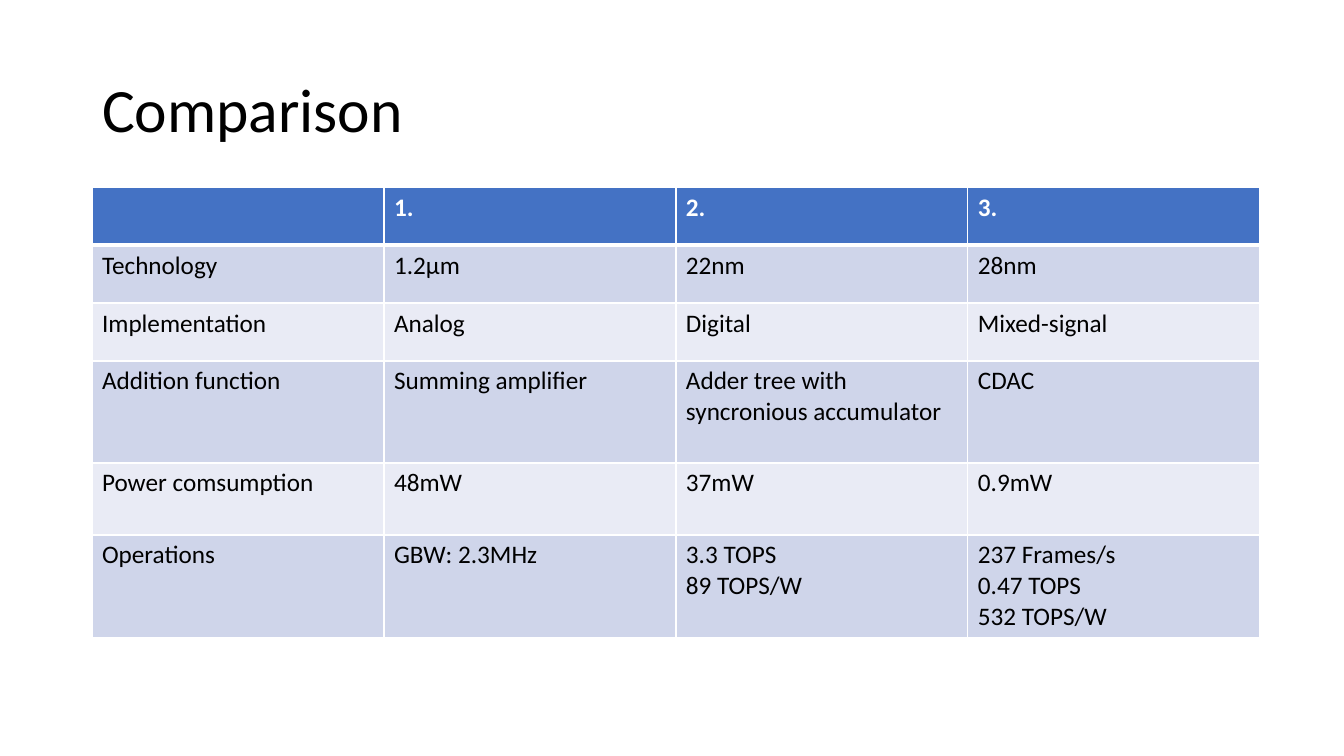
import pptx
import pptx.dml.color
import pptx.enum.text
import pptx.oxml
import pptx.oxml.ns
import pptx.util

RGB = pptx.dml.color.RGBColor
BLACK = RGB(0x00, 0x00, 0x00)
WHITE = RGB(0xFF, 0xFF, 0xFF)
BLUE = RGB(0x44, 0x72, 0xC4)
BANDS = [RGB(0xE9, 0xEB, 0xF5), RGB(0xCF, 0xD5, 0xEA)]
FONT = "Calibri"

TITLE = "Comparison"
ROWS = [
    ("", "1.", "2.", "3."),
    ("Technology", "1.2µm", "22nm", "28nm"),
    ("Implementation", "Analog", "Digital", "Mixed-signal"),
    ("Addition function", "Summing amplifier", "Adder tree with syncronious accumulator", "CDAC"),
    ("Power comsumption", "48mW", "37mW", "0.9mW"),
    ("Operations", "GBW: 2.3MHz", "3.3 TOPS\n89 TOPS/W", "237 Frames/s\n0.47 TOPS\n532 TOPS/W"),
]
SLIDE_SIZE = (1344, 756)
TITLE_BOX = (92, 40, 1159, 146)
TABLE_LEFT, TABLE_TOP = 92, 187
COLUMN_WIDTH = 292
ROW_HEIGHTS = [58, 58, 58, 102, 72, 102]


def px(n):
    return pptx.util.Emu(round(n * 914400 / 100.8))


def write(tf, text, size, color=BLACK, bold=False, spacing=None):
    tf.text = text
    for p in tf.paragraphs:
        p.alignment = pptx.enum.text.PP_ALIGN.LEFT
        p.line_spacing = spacing
        p.font.size = pptx.util.Pt(size)
        for r in p.runs:
            r.font.name = FONT
            r.font.size = pptx.util.Pt(size)
            r.font.bold = bold
            r.font.color.rgb = color


def set_borders(cell, top, bottom):
    tc_pr = cell._tc.get_or_add_tcPr()
    widths = {"lnL": 1, "lnR": 1, "lnT": top, "lnB": bottom}
    for i, (side, width) in enumerate(widths.items()):
        tc_pr.insert(i, pptx.oxml.parse_xml(
            f'<a:{side} {pptx.oxml.ns.nsdecls("a")} w="{pptx.util.Pt(width)}">'
            f'<a:solidFill><a:srgbClr val="{WHITE}"/></a:solidFill></a:{side}>'))


def add_title(s):
    sp = s.shapes.title
    sp.left, sp.top, sp.width, sp.height = map(px, TITLE_BOX)
    sp.text_frame.vertical_anchor = pptx.enum.text.MSO_ANCHOR.MIDDLE
    write(sp.text_frame, TITLE, 44, spacing=0.9)


def add_comparison(s):
    columns = len(ROWS[0])
    table = s.shapes.add_table(
        len(ROWS), columns, px(TABLE_LEFT), px(TABLE_TOP),
        px(COLUMN_WIDTH * columns), px(sum(ROW_HEIGHTS))).table
    for column in table.columns:
        column.width = px(COLUMN_WIDTH)
    for i, (row, height) in enumerate(zip(ROWS, ROW_HEIGHTS)):
        table.rows[i].height = px(height)
        header = i == 0
        for j, text in enumerate(row):
            cell = table.cell(i, j)
            cell.fill.solid()
            cell.fill.fore_color.rgb = BLUE if header else BANDS[i % 2]
            set_borders(cell, 3 if i == 1 else 1, 3 if header else 1)
            write(cell.text_frame, text, 18, color=WHITE if header else BLACK, bold=header)


def main():
    prs = pptx.Presentation()
    prs.slide_width, prs.slide_height = map(px, SLIDE_SIZE)
    s = prs.slides.add_slide(prs.slide_layouts[5])
    add_title(s)
    add_comparison(s)
    prs.save("out.pptx")


if __name__ == "__main__":
    main()
